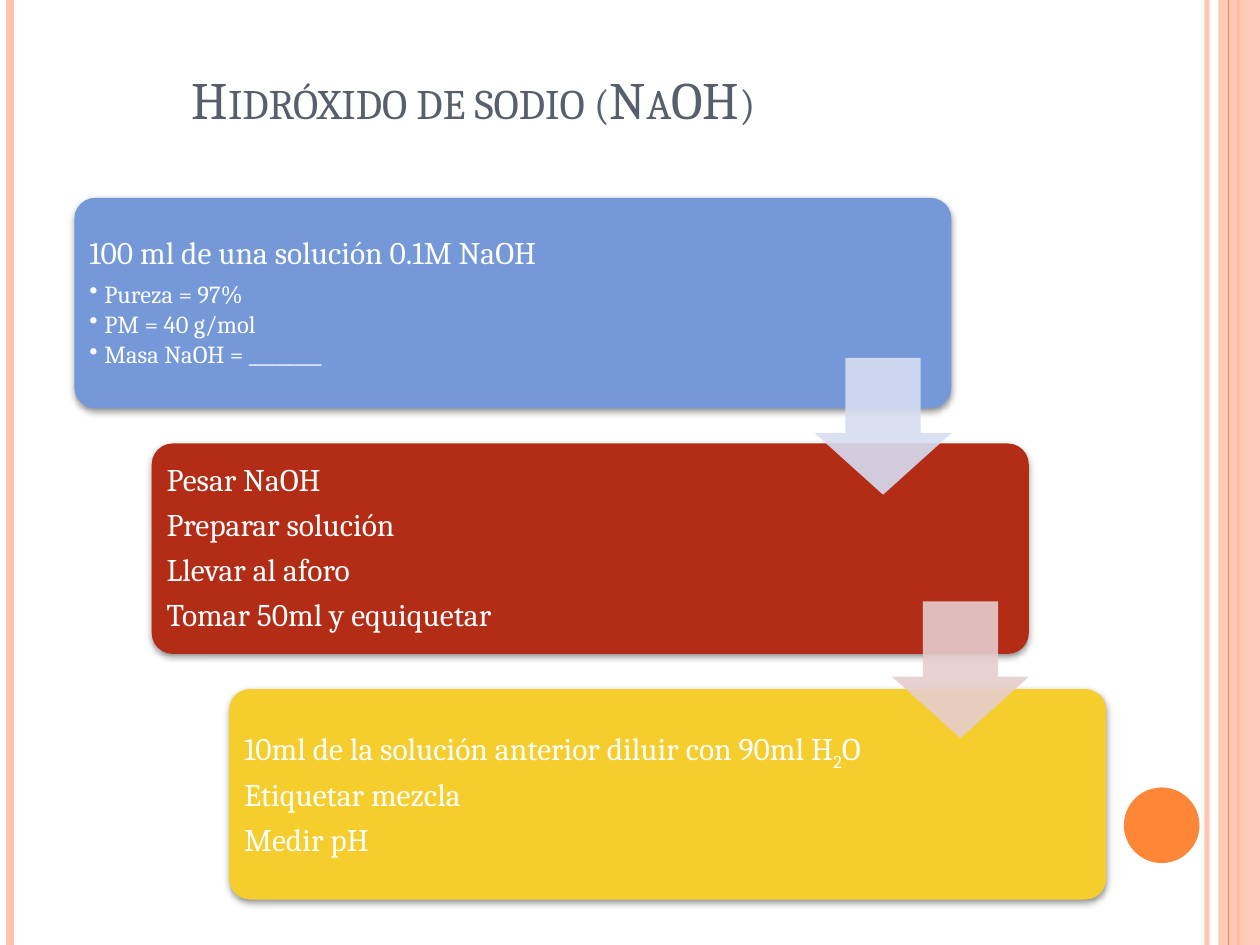
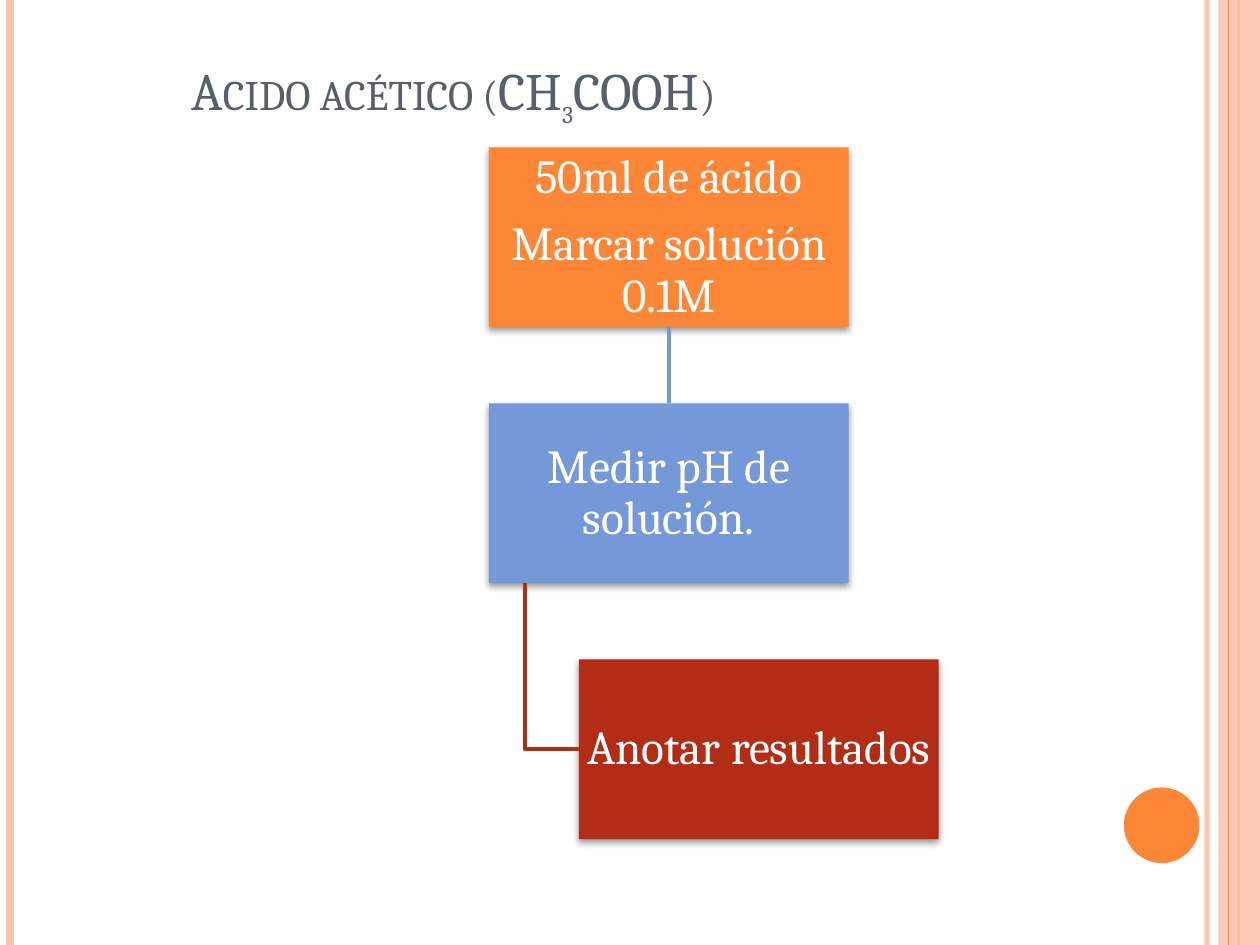
from lxml import etree
from pptx import Presentation
from pptx.dml.color import RGBColor
from pptx.enum.shapes import MSO_CONNECTOR, MSO_SHAPE
from pptx.enum.text import MSO_ANCHOR, MSO_AUTO_SIZE, PP_ALIGN
from pptx.oxml.ns import qn
from pptx.util import Inches, Pt

STRAIGHT = MSO_CONNECTOR.STRAIGHT
RECT, ROUNDED = MSO_SHAPE.RECTANGLE, MSO_SHAPE.ROUNDED_RECTANGLE
ARROW, OVAL = MSO_SHAPE.DOWN_ARROW, MSO_SHAPE.OVAL
LEFT, CENTER = PP_ALIGN.LEFT, PP_ALIGN.CENTER
MIDDLE, BOTTOM = MSO_ANCHOR.MIDDLE, MSO_ANCHOR.BOTTOM

WHITE = RGBColor(0xFF, 0xFF, 0xFF)
SLATE = RGBColor(0x57, 0x5F, 0x6D)
ORANGE = RGBColor(0xFE, 0x86, 0x37)
PEACH = RGBColor(0xFE, 0xC3, 0xAE)
BLUE = RGBColor(0x75, 0x98, 0xD9)
RED = RGBColor(0xB3, 0x2C, 0x16)
YELLOW = RGBColor(0xF5, 0xCD, 0x2D)
PALE_BLUE = RGBColor(0xD6, 0xDD, 0xF1)
PALE_RED = RGBColor(0xE5, 0xCD, 0xCC)

FONT = "Cambria"
W, H = Inches(10), Inches(7.5)
TITLE_BOX = (Inches(1.42), Inches(-0.17), Inches(8.5), Inches(1.25))
STAIRS_BOX = (Inches(0.59), Inches(1.57), Inches(8.19), Inches(5.57))
FLOW_BOX = (Inches(3.88), Inches(1.17), Inches(3.57), Inches(5.49))


def write(tf, text, size, color=WHITE, align=LEFT, first=False, spacing=None,
          after=0, bullet=False, small_caps=False):
    """Add one paragraph; text between ~ marks is subscript."""
    p = tf.paragraphs[0] if first else tf.add_paragraph()
    p.alignment, p.line_spacing, p.space_after = align, spacing, Pt(size * after)
    if bullet:
        p.level = 1
        pPr = p._p.get_or_add_pPr()
        pPr.set("marL", str(Inches(0.12)))
        pPr.set("indent", str(-Inches(0.12)))
        etree.SubElement(pPr, qn("a:buChar")).set("char", "•")
    for i, part in enumerate(text.split("~")):
        r = p.add_run()
        r.text = part
        r.font.name, r.font.size, r.font.color.rgb = FONT, Pt(size), color
        rPr = r.font._element
        if i % 2:
            rPr.set("baseline", "-25000")
        if small_caps:
            rPr.set("cap", "small")


def set_frame(tf, margin, anchor):
    tf.word_wrap, tf.auto_size = True, MSO_AUTO_SIZE.NONE
    tf.vertical_anchor = anchor
    tf.margin_left = tf.margin_right = Inches(margin)
    tf.margin_top = tf.margin_bottom = Inches(margin)


def set_alpha(sp, percent):
    color = sp.element.xpath(".//a:srgbClr")[0]
    etree.SubElement(color, qn("a:alpha")).set("val", str(percent * 1000))


def add_shadow(sp, distance, percent):
    effects = sp.element.spPr.find(qn("a:effectLst"))
    shadow = etree.SubElement(effects, qn("a:outerShdw"), blurRad=str(Pt(4)),
                              dist=str(Pt(distance)), dir="5400000", rotWithShape="0")
    color = etree.SubElement(shadow, qn("a:srgbClr"), val="000000")
    etree.SubElement(color, qn("a:alpha"), val=str(percent * 1000))


def add_block(s, kind, box, color, adjust=()):
    sp = s.shapes.add_shape(kind, *(int(v) for v in box))
    sp.shadow.inherit = False
    sp.fill.solid()
    sp.fill.fore_color.rgb = color
    sp.line.fill.background()
    for i, value in enumerate(adjust):
        sp.adjustments[i] = value
    return sp


def add_line(s, x1, y1, x2, y2, color, width):
    line = s.shapes.add_connector(STRAIGHT, int(x1), int(y1), int(x2), int(y2))
    line.line.color.rgb, line.line.width = color, Pt(width)
    etree.SubElement(line.element.spPr, qn("a:effectLst"))
    return line


def decorate_layout(s, layout):
    """Draw the side bands and the disc, then hand them to the shared layout."""
    def rule(x, color, width):
        return add_line(s, Inches(x), 0, Inches(x), H, color, width)

    inner = rule(9.58, PEACH, 3)
    set_alpha(inner, 93)
    parts = [inner, rule(0.08, PEACH, 4.5), rule(9.83, ORANGE, 1.5)]
    band = add_block(s, RECT, (Inches(9.67), 0, Inches(0.33), H), PEACH)
    set_alpha(band, 87)
    parts += [band, rule(9.75, ORANGE, 0.75)]
    disc = (Inches(8.92), Inches(6.25), Inches(0.6), Inches(0.6))
    parts.append(add_block(s, OVAL, disc, ORANGE))
    for i, part in enumerate(parts):
        part.element.xpath(".//p:cNvPr")[0].set("id", str(100 + i))
        layout.shapes.element.append(part.element)


def add_title(s, text):
    title = s.shapes.title
    title.left, title.top, title.width, title.height = TITLE_BOX
    tf = title.text_frame
    set_frame(tf, 0.1, BOTTOM)
    tf.margin_top = tf.margin_bottom = Inches(0.05)
    write(tf, text, 30, SLATE, first=True, small_caps=True)


def add_stairs(s, box, steps, arrows):
    """Cards stepping down to the right, with an arrow over each gap."""
    x, y, w, h = box
    card_w, card_h = w * 0.85, h * 0.3
    dx, dy = (w - card_w) / (len(steps) - 1), (h - card_h) / (len(steps) - 1)
    for i, (color, lines, bullets) in enumerate(steps):
        card = add_block(s, ROUNDED, (x + i * dx, y + i * dy, card_w, card_h),
                         color, [0.1])
        add_shadow(card, 1.6, 42)
        tf = card.text_frame
        set_frame(tf, 0.07, MIDDLE)
        for j, line in enumerate(lines):
            write(tf, line, 18, first=j == 0, spacing=0.9, after=0.35)
        for line in bullets:
            write(tf, line, 14, spacing=0.9, after=0.15, bullet=True)

    # Arrows line up with the right edge of the card above
    side = card_h * 0.65
    for i, (color, drop) in enumerate(arrows):
        arrow = add_block(s, ARROW, (x + i * dx + card_w - side,
                                     y + i * dy + card_h * drop, side, side),
                          color, [0.55, 0.45])
        set_alpha(arrow, 90)


def add_flow(s, box, nodes):
    """Column of boxes; each node gives its colour, its indent and its lines."""
    x, y, w, h = box
    node_w, node_h = w * 0.8, h * 0.26
    dy = (h - node_h) / (len(nodes) - 1)
    shapes = []
    for i, (color, indent, lines) in enumerate(nodes):
        node = add_block(s, RECT, (x + w * indent, y + i * dy, node_w, node_h), color)
        add_shadow(node, 2, 40)
        tf = node.text_frame
        set_frame(tf, 0.02, MIDDLE)
        for j, line in enumerate(lines):
            write(tf, line, 27, align=CENTER, first=j == 0, spacing=0.9, after=0.35)
        shapes.append(node)

    # Straight link from the first box to the second
    start, check, result = shapes
    link = add_line(s, 0, 0, 0, 0, BLUE, 2)
    link.begin_connect(start, 2)
    link.end_connect(check, 0)

    # Elbow from the second box to the indented one
    elbow_x = int(check.left + node_w * 0.1)
    elbow_y = result.top + result.height // 2
    builder = s.shapes.build_freeform(elbow_x, check.top + check.height)
    builder.add_line_segments([(elbow_x, elbow_y), (result.left, elbow_y)], close=False)
    elbow = builder.convert_to_shape()
    elbow.shadow.inherit = False
    elbow.fill.background()
    elbow.line.color.rgb, elbow.line.width = RED, Pt(2)


def main():
    prs = Presentation()
    prs.slide_width, prs.slide_height = W, H
    layout = prs.slide_layouts[5]

    # Sodium hydroxide
    s = prs.slides.add_slide(layout)
    decorate_layout(s, layout)
    add_title(s, "Hidróxido de sodio (NaOH)")
    add_stairs(s, STAIRS_BOX, [
        (BLUE, ["100 ml de una solución 0.1M NaOH"],
         ["Pureza = 97%", "PM = 40 g/mol", "Masa NaOH = ________"]),
        (RED, ["Pesar NaOH", "Preparar solución", "Llevar al aforo",
               "Tomar 50ml y equiquetar"], []),
        (YELLOW, ["10ml de la solución anterior diluir con 90ml H~2~O",
                  "Etiquetar mezcla", "Medir pH"], []),
    ], [(PALE_BLUE, 0.76), (PALE_RED, 0.75)])

    # Acetic acid
    s = prs.slides.add_slide(layout)
    add_title(s, "Acido acético (CH~3~COOH)")
    add_flow(s, FLOW_BOX, [
        (ORANGE, 0, ["50ml de ácido", "Marcar solución 0.1M"]),
        (BLUE, 0, ["Medir pH de solución."]),
        (RED, 0.2, ["Anotar resultados"]),
    ])
    prs.save("out.pptx")


if __name__ == "__main__":
    main()
